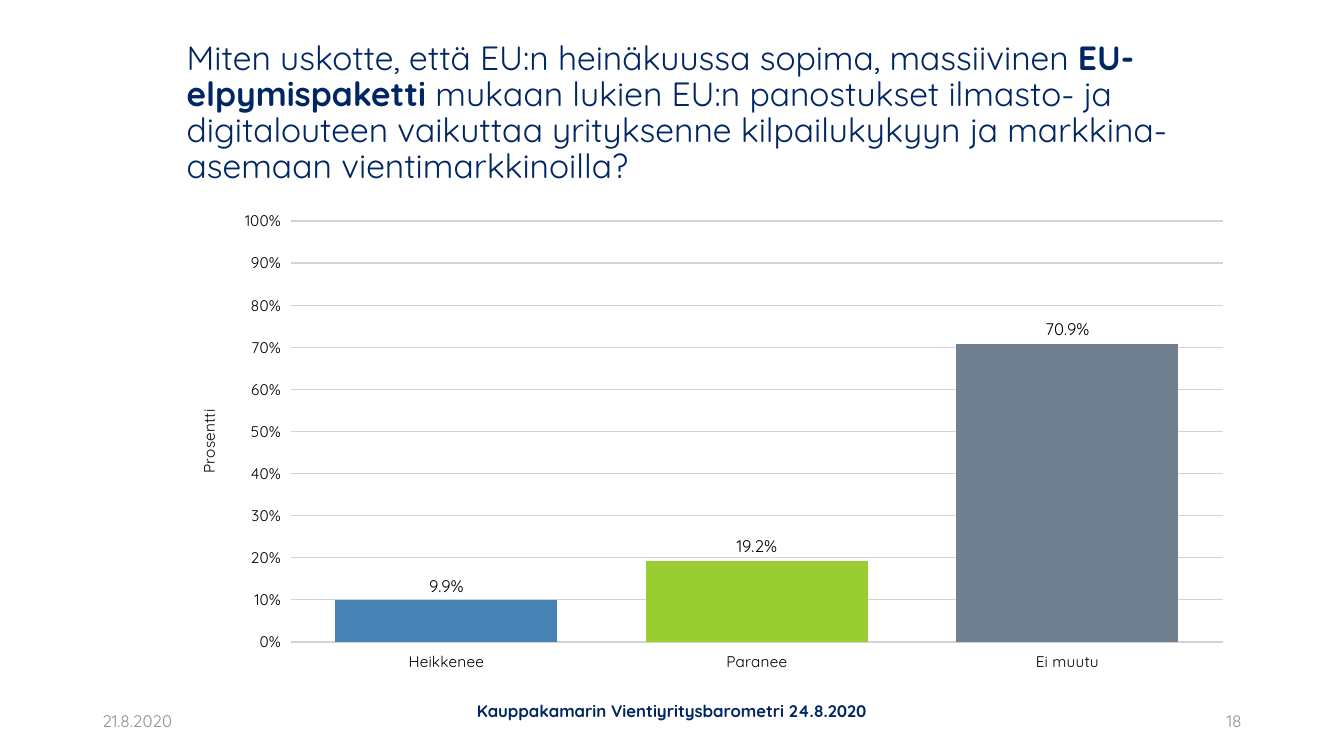
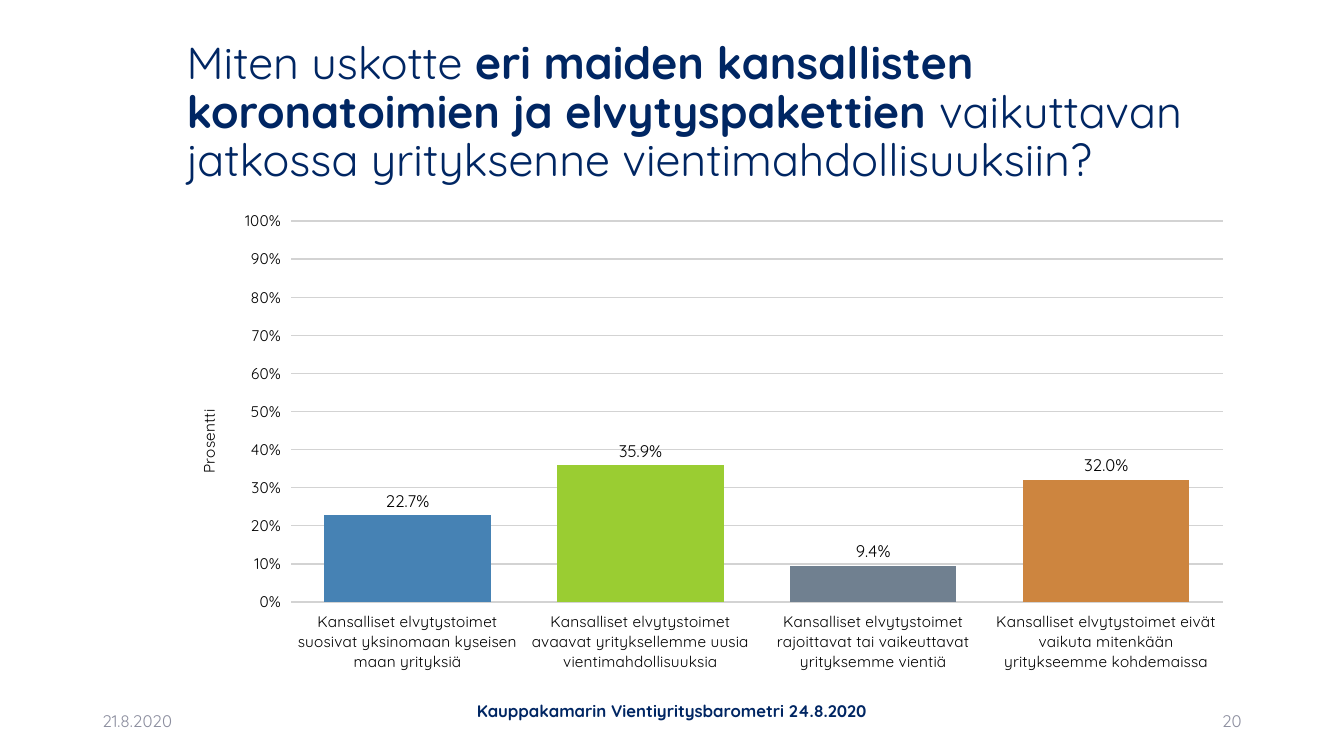
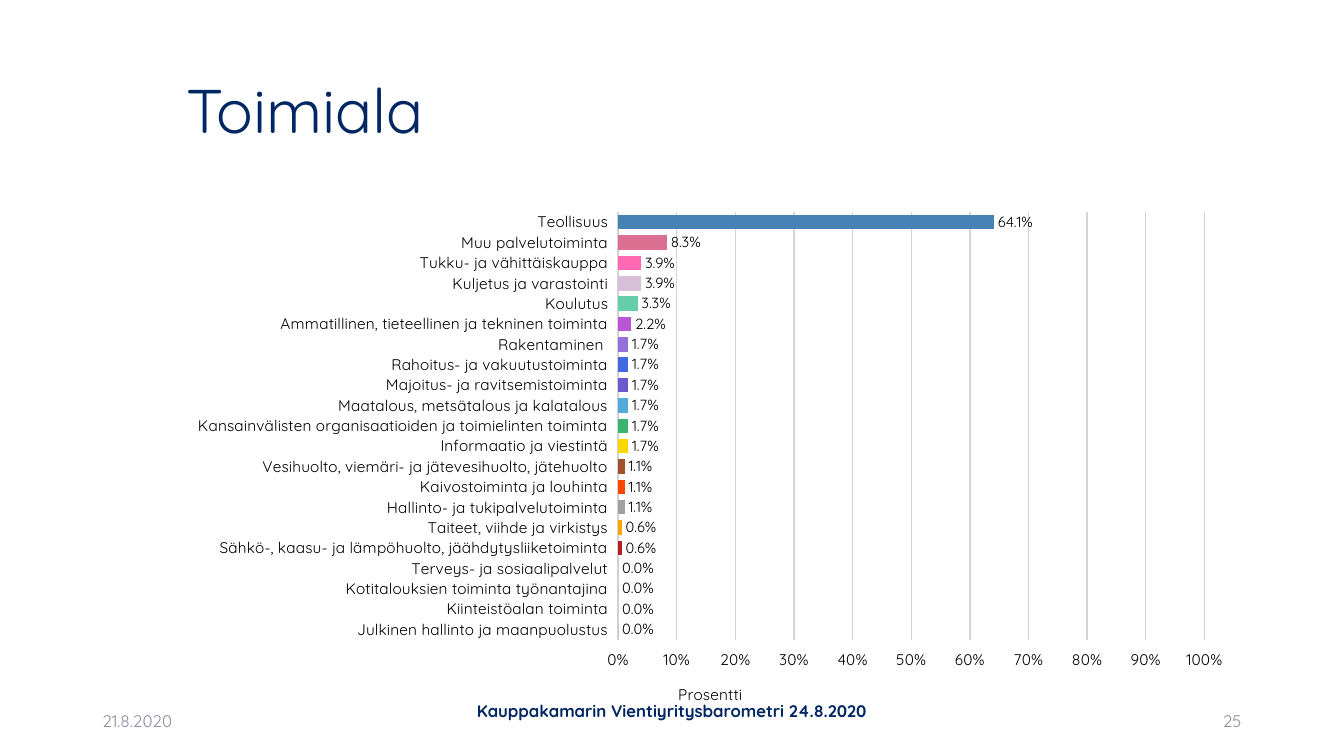
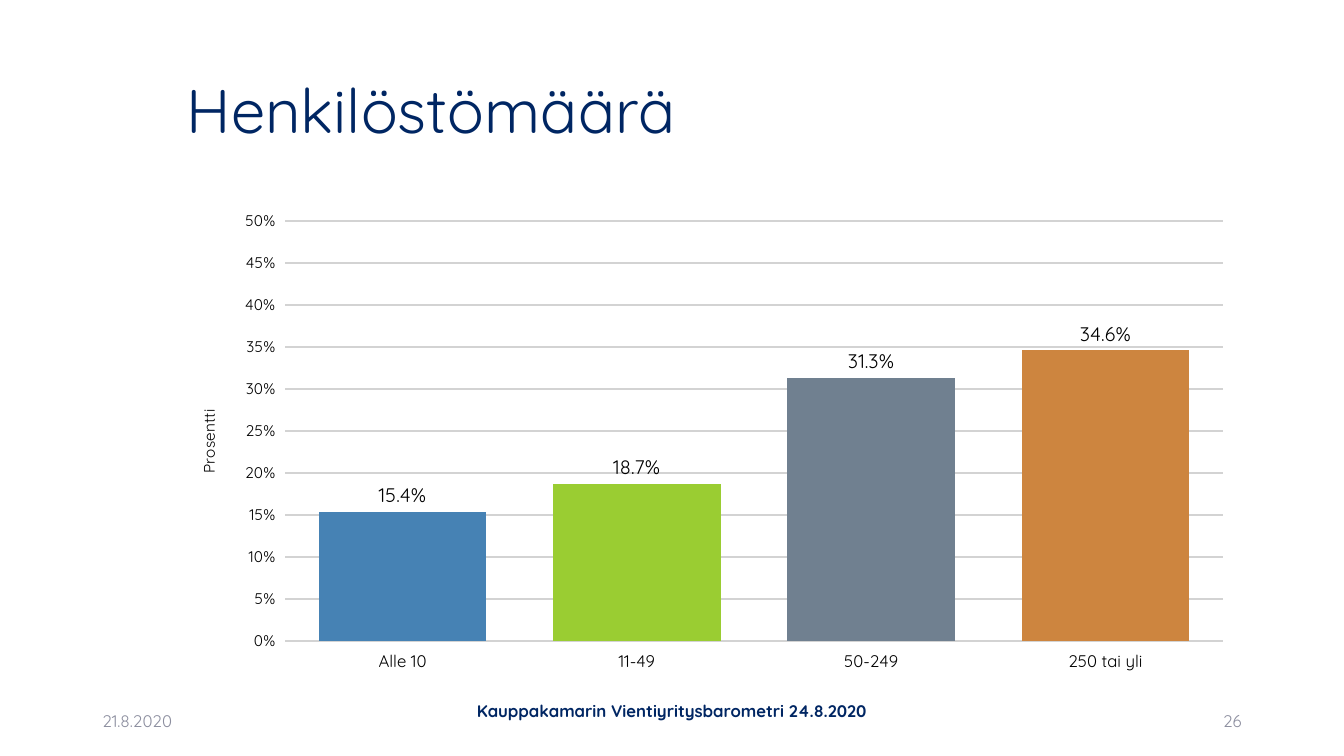
from lxml.etree import Element
from pptx import Presentation
from pptx.chart.data import CategoryChartData
from pptx.dml.color import RGBColor
from pptx.enum.chart import XL_CHART_TYPE, XL_LABEL_POSITION, XL_TICK_MARK
from pptx.enum.text import MSO_ANCHOR, MSO_AUTO_SIZE, PP_ALIGN
from pptx.oxml.ns import qn
from pptx.util import Cm, Pt

FONT = "Quicksand"
COLOURS = {
    "navy": "002663",
    "muted": "8C8E9F",
    "black": "000000",
    "grid": "D3D3D3",
}
BAR_COLOURS = {
    "steel blue": "4682B4",
    "yellow green": "9ACD32",
    "slate": "708090",
    "peru": "CD853F",
    "brick": "B22222",
    "orange": "FFA500",
    "grey": "A1A1A1",
    "orange red": "FF4500",
    "sienna": "A0522D",
    "gold": "FFD700",
    "sea green": "3CB371",
    "sky": "54A9DD",
    "slate blue": "6A5ACD",
    "royal blue": "4169E1",
    "purple": "9370DB",
    "orchid": "BA55D3",
    "aquamarine": "66CDAA",
    "thistle": "D8BFD8",
    "pink": "FF69B4",
    "violet red": "DB7093",
}

CONTENT_LEFT, CONTENT_WIDTH = Cm(4.45), Cm(26.9)
TITLE_TOP, TITLE_HEIGHT = Cm(1.02), Cm(3.68)
CHART_TOP = Cm(5.08)
FOOTER_HEIGHT = Cm(1.02)

DATE = "21.8.2020"
FOOTER = "Kauppakamarin Vientiyritysbarometri 24.8.2020"
VALUE_TITLE = "Prosentti"

SLIDES = [
    {
        "number": 18,
        "title": [
            ("Miten uskotte, että EU:n heinäkuussa sopima, massiivinen ", False),
            ("EU-elpymispaketti ", True),
            ("mukaan lukien EU:n panostukset ilmasto- ja digitalouteen vaikuttaa "
             "yrityksenne kilpailukykyyn ja markkina-asemaan vientimarkkinoilla?", False),
        ],
        "title_size": 24,
        "type": XL_CHART_TYPE.COLUMN_CLUSTERED,
        "height": 12.09,
        "maximum": 1,
        "category_size": 11,
        "label_size": 12,
        "data": [("Heikkenee", 0.099), ("Paranee", 0.192), ("Ei muutu", 0.709)],
    },
    {
        "number": 20,
        "title": [
            ("Miten uskotte ", False),
            ("eri maiden kansallisten koronatoimien ja elvytyspakettien ", True),
            ("vaikuttavan jatkossa yrityksenne vientimahdollisuuksiin?", False),
        ],
        "title_size": 32,
        "type": XL_CHART_TYPE.COLUMN_CLUSTERED,
        "height": 12.09,
        "maximum": 1,
        "category_size": 11,
        "label_size": 12,
        "data": [
            ("Kansalliset elvytystoimet suosivat yksinomaan kyseisen maan yrityksiä", 0.227),
            ("Kansalliset elvytystoimet avaavat yrityksellemme uusia vientimahdollisuuksia", 0.359),
            ("Kansalliset elvytystoimet rajoittavat tai vaikeuttavat yrityksemme vientiä", 0.094),
            ("Kansalliset elvytystoimet eivät vaikuta mitenkään yritykseemme kohdemaissa", 0.32),
        ],
    },
    {
        "number": 25,
        "title": [("Toimiala", False)],
        "title_size": 44,
        "type": XL_CHART_TYPE.BAR_CLUSTERED,
        "height": 13.21,
        "maximum": 1,
        "category_size": 11,
        "label_size": 10.5,
        "data": [
            ("Julkinen hallinto ja maanpuolustus", 0),
            ("Kiinteistöalan toiminta", 0),
            ("Kotitalouksien toiminta työnantajina", 0),
            ("Terveys- ja sosiaalipalvelut", 0),
            ("Sähkö-, kaasu- ja lämpöhuolto, jäähdytysliiketoiminta", 0.006),
            ("Taiteet, viihde ja virkistys", 0.006),
            ("Hallinto- ja tukipalvelutoiminta", 0.011),
            ("Kaivostoiminta ja louhinta", 0.011),
            ("Vesihuolto, viemäri- ja jätevesihuolto, jätehuolto", 0.011),
            ("Informaatio ja viestintä", 0.017),
            ("Kansainvälisten organisaatioiden ja toimielinten toiminta", 0.017),
            ("Maatalous, metsätalous ja kalatalous", 0.017),
            ("Majoitus- ja ravitsemistoiminta", 0.017),
            ("Rahoitus- ja vakuutustoiminta", 0.017),
            ("Rakentaminen ", 0.017),
            ("Ammatillinen, tieteellinen ja tekninen toiminta", 0.022),
            ("Koulutus", 0.033),
            ("Kuljetus ja varastointi", 0.039),
            ("Tukku- ja vähittäiskauppa", 0.039),
            ("Muu palvelutoiminta", 0.083),
            ("Teollisuus", 0.641),
        ],
    },
    {
        "number": 26,
        "title": [("Henkilöstömäärä", False)],
        "title_size": 44,
        "type": XL_CHART_TYPE.COLUMN_CLUSTERED,
        "height": 12.09,
        "maximum": 0.5,
        "category_size": 12,
        "label_size": 14,
        "data": [
            ("Alle 10", 0.154),
            ("11-49", 0.187),
            ("50-249", 0.313),
            ("250 tai yli", 0.346),
        ],
    },
]


def style_font(font, size, colour, bold=False):
    font.name = FONT
    font.size = Pt(size)
    font.bold = bold
    font.color.rgb = RGBColor.from_string(COLOURS[colour])


def add_title(slide, runs, size):
    title = slide.shapes.title
    title.left, title.top = CONTENT_LEFT, TITLE_TOP
    title.width, title.height = CONTENT_WIDTH, TITLE_HEIGHT
    text_frame = title.text_frame
    text_frame.auto_size = MSO_AUTO_SIZE.NONE
    text_frame.vertical_anchor = MSO_ANCHOR.MIDDLE
    paragraph = text_frame.paragraphs[0]
    paragraph.alignment = PP_ALIGN.LEFT
    paragraph.line_spacing = 0.9
    for text, bold in runs:
        run = paragraph.add_run()
        run.text = text
        style_font(run.font, size, "navy", bold)


def add_footer(slide, number):
    parts = [
        (DATE, 2.33, 17.65, 7.62, PP_ALIGN.LEFT, "muted", False),
        (FOOTER, 11.22, 17.39, 11.43, PP_ALIGN.CENTER, "navy", True),
        (str(number), 23.92, 17.65, 7.62, PP_ALIGN.RIGHT, "muted", False),
    ]
    for text, left, top, width, alignment, colour, bold in parts:
        box = slide.shapes.add_textbox(Cm(left), Cm(top), Cm(width), FOOTER_HEIGHT)
        text_frame = box.text_frame
        text_frame.word_wrap = True
        text_frame.vertical_anchor = MSO_ANCHOR.MIDDLE
        text_frame.text = text
        paragraph = text_frame.paragraphs[0]
        paragraph.alignment = alignment
        style_font(paragraph.runs[0].font, 12, colour, bold)


def show_every_label(category_axis):
    axis_element = category_axis._element
    body_properties = axis_element.find(qn("c:txPr")).find(qn("a:bodyPr"))
    body_properties.set("rot", "0")
    body_properties.set("vert", "horz")
    label_skip = Element(qn("c:tickLblSkip"), val="1")
    axis_element.find(qn("c:noMultiLvlLbl")).addprevious(label_skip)


def style_axes(chart, content):
    category_axis, value_axis = chart.category_axis, chart.value_axis
    for axis, size in ((category_axis, content["category_size"]), (value_axis, 11)):
        axis.major_tick_mark = XL_TICK_MARK.OUTSIDE
        axis.format.line.fill.background()
        style_font(axis.tick_labels.font, size, "black")
    category_axis.has_major_gridlines = False
    if content["type"] == XL_CHART_TYPE.BAR_CLUSTERED:
        show_every_label(category_axis)
    value_axis.minimum_scale = 0
    value_axis.maximum_scale = content["maximum"]
    value_axis.tick_labels.number_format = "0%"
    value_axis.tick_labels.number_format_is_linked = False
    value_axis.has_major_gridlines = True
    grid_line = value_axis.major_gridlines.format.line
    grid_line.width = Pt(1)
    grid_line.color.rgb = RGBColor.from_string(COLOURS["grid"])
    text_frame = value_axis.axis_title.text_frame
    text_frame.text = VALUE_TITLE
    style_font(text_frame.paragraphs[0].runs[0].font, 11, "black")


def add_bar_chart(slide, content):
    categories, values = zip(*content["data"])
    chart_data = CategoryChartData(number_format="0.0%")
    chart_data.categories = categories
    chart_data.add_series("Series 1", values)
    chart = slide.shapes.add_chart(
        content["type"], CONTENT_LEFT, CHART_TOP, CONTENT_WIDTH,
        Cm(content["height"]), chart_data).chart
    chart.has_title = False
    chart.has_legend = False
    style_font(chart.font, 11, "black")
    style_axes(chart, content)

    plot = chart.plots[0]
    plot.gap_width = 40
    plot.vary_by_categories = False
    plot.has_data_labels = True
    labels = plot.data_labels
    labels.show_value = True
    labels.position = XL_LABEL_POSITION.OUTSIDE_END
    labels.number_format = "0.0%"
    labels.number_format_is_linked = False
    style_font(labels.font, content["label_size"], "black")

    palette = list(BAR_COLOURS.values())
    for index in range(len(values)):
        fill = plot.series[0].points[index].format.fill
        fill.solid()
        fill.fore_color.rgb = RGBColor.from_string(palette[index % len(palette)])


def main():
    presentation = Presentation()
    presentation.slide_width, presentation.slide_height = Cm(33.87), Cm(19.05)
    title_only = presentation.slide_layouts[5]
    for content in SLIDES:
        slide = presentation.slides.add_slide(title_only)
        add_title(slide, content["title"], content["title_size"])
        add_footer(slide, content["number"])
        add_bar_chart(slide, content)
    presentation.save("out.pptx")


if __name__ == "__main__":
    main()
